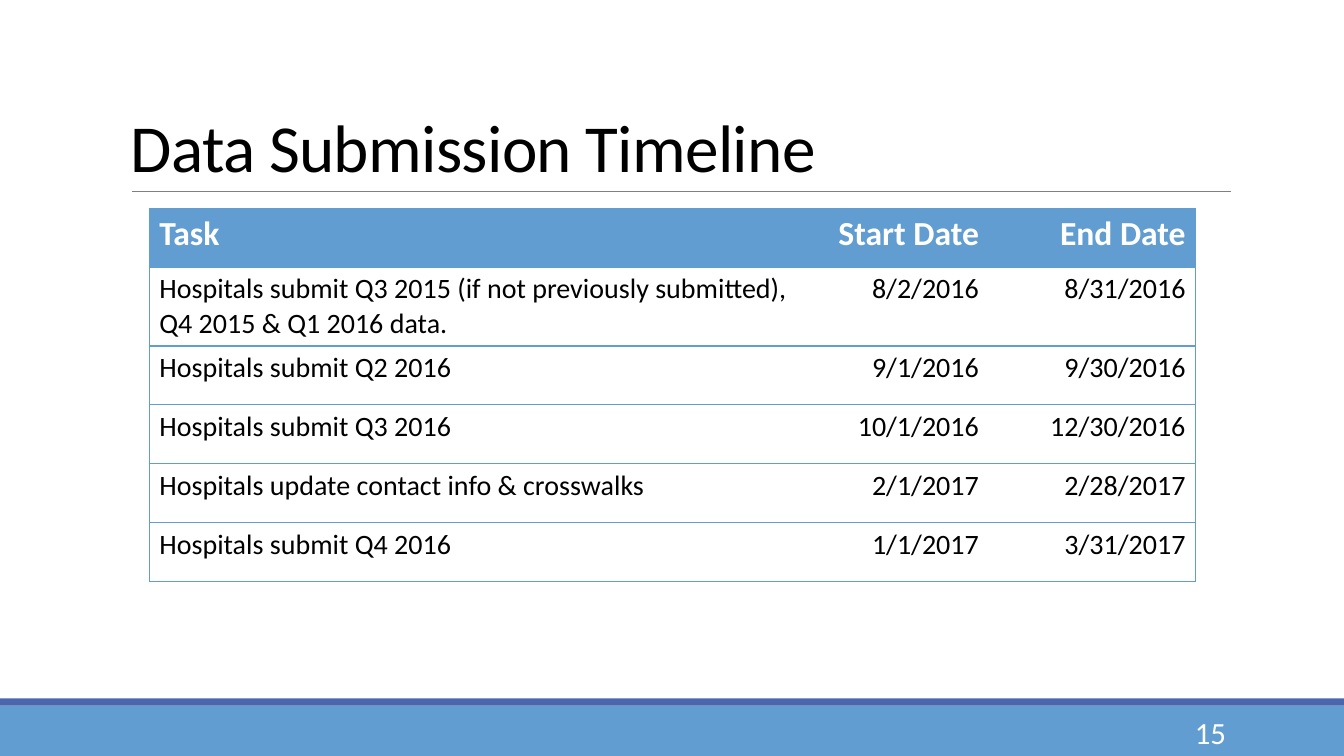
"""Build the data submission timeline slide."""
from lxml import etree
from pptx import Presentation
from pptx.dml.color import RGBColor
from pptx.enum.shapes import MSO_CONNECTOR, MSO_SHAPE
from pptx.enum.text import MSO_ANCHOR, PP_ALIGN
from pptx.oxml.ns import qn
from pptx.util import Pt

TITLE = "Data Submission Timeline"
NUMBER = "15"
ROWS = [
    ("Task", "Start Date", "End Date"),
    ("Hospitals submit Q3 2015 (if not previously submitted), Q4 2015 & Q1 2016 data.",
     "8/2/2016", "8/31/2016"),
    ("Hospitals submit Q2 2016", "9/1/2016", "9/30/2016"),
    ("Hospitals submit Q3 2016", "10/1/2016", "12/30/2016"),
    ("Hospitals update contact info & crosswalks", "2/1/2017", "2/28/2017"),
    ("Hospitals submit Q4 2016", "1/1/2017", "3/31/2017"),
]
WIDTHS = (471.3, 128.6, 147.6)
HEIGHTS = (42, 56.4, 42, 42, 42, 42)
LEFT, TOP = 106.6, 148.8
WIDE, HIGH = 960, 540

FONT = "Calibri"
BLUE = RGBColor(0x62, 0x9D, 0xD1)
NAVY = RGBColor(0x4A, 0x66, 0xAC)
GRAY = RGBColor(0x80, 0x80, 0x80)
BLACK = RGBColor(0, 0, 0)
WHITE = RGBColor(255, 255, 255)
RECT, LINE = MSO_SHAPE.RECTANGLE, MSO_CONNECTOR.STRAIGHT
START, END = PP_ALIGN.LEFT, PP_ALIGN.RIGHT
MIDDLE, BOTTOM = MSO_ANCHOR.MIDDLE, MSO_ANCHOR.BOTTOM


def write(frame, text, size, color, align=START, bold=False):
    para = frame.paragraphs[0]
    para.text = text
    para.alignment = align
    font = para.font
    font.name, font.size, font.bold = FONT, Pt(size), bold
    font.color.rgb = color
    return para


def add_bar(slide, top, height, color):
    bar = slide.shapes.add_shape(RECT, 0, Pt(top), Pt(WIDE), Pt(height))
    bar.shadow.inherit = False
    bar.fill.solid()
    bar.fill.fore_color.rgb = color
    bar.line.fill.background()


def add_text(slide, box, anchor, *style):
    frame = slide.shapes.add_textbox(*map(Pt, box)).text_frame
    frame.word_wrap = True
    frame.vertical_anchor = anchor
    return write(frame, *style)


def add_edge(cell, side, shown):
    edge = etree.SubElement(cell._tc.get_or_add_tcPr(), qn("a:ln" + side), w=str(Pt(1)))
    if shown:
        fill = etree.SubElement(edge, qn("a:solidFill"))
        etree.SubElement(fill, qn("a:srgbClr"), val=str(BLUE))
    else:
        etree.SubElement(edge, qn("a:noFill"))


def add_grid(slide):
    grid = slide.shapes.add_table(len(ROWS), len(WIDTHS), Pt(LEFT), Pt(TOP),
                                  Pt(sum(WIDTHS)), Pt(sum(HEIGHTS))).table
    grid.horz_banding = False
    for col, width in zip(grid.columns, WIDTHS):
        col.width = Pt(width)
    for row, height in zip(grid.rows, HEIGHTS):
        row.height = Pt(height)
    for i, row in enumerate(ROWS):
        head = i == 0
        for j, text in enumerate(row):
            cell = grid.cell(i, j)
            write(cell.text_frame, text, 24 if head else 20, WHITE if head else BLACK,
                  END if j else START, head)
            for side in "LRTB":
                inner = (side == "L" and j > 0) or (side == "R" and j < len(row) - 1)
                add_edge(cell, side, not inner)
            if head:
                cell.fill.solid()
                cell.fill.fore_color.rgb = BLUE
            else:
                cell.fill.background()


def main():
    deck = Presentation()
    deck.slide_width, deck.slide_height = Pt(WIDE), Pt(HIGH)
    slide = deck.slides.add_slide(deck.slide_layouts[6])
    add_bar(slide, 504, 36, BLUE)
    add_bar(slide, 498.8, 5.2, NAVY)
    rule = slide.shapes.add_connector(LINE, Pt(94.2), Pt(136.8), Pt(879), Pt(136.8))
    rule.line.color.rgb = GRAY
    rule.line.width = Pt(0.5)
    etree.SubElement(rule._element.spPr, qn("a:effectLst"))
    title = add_text(slide, (86.4, 22.6, 796, 114.2), BOTTOM, TITLE, 48, BLACK)
    title.line_spacing = 0.85
    title.runs[0]._r.get_or_add_rPr().set("spc", "-50")
    add_text(slide, (779.8, 508.6, 103, 28.8), MIDDLE, NUMBER, 22, WHITE, END)
    add_grid(slide)
    deck.save("out.pptx")


if __name__ == "__main__":
    main()
